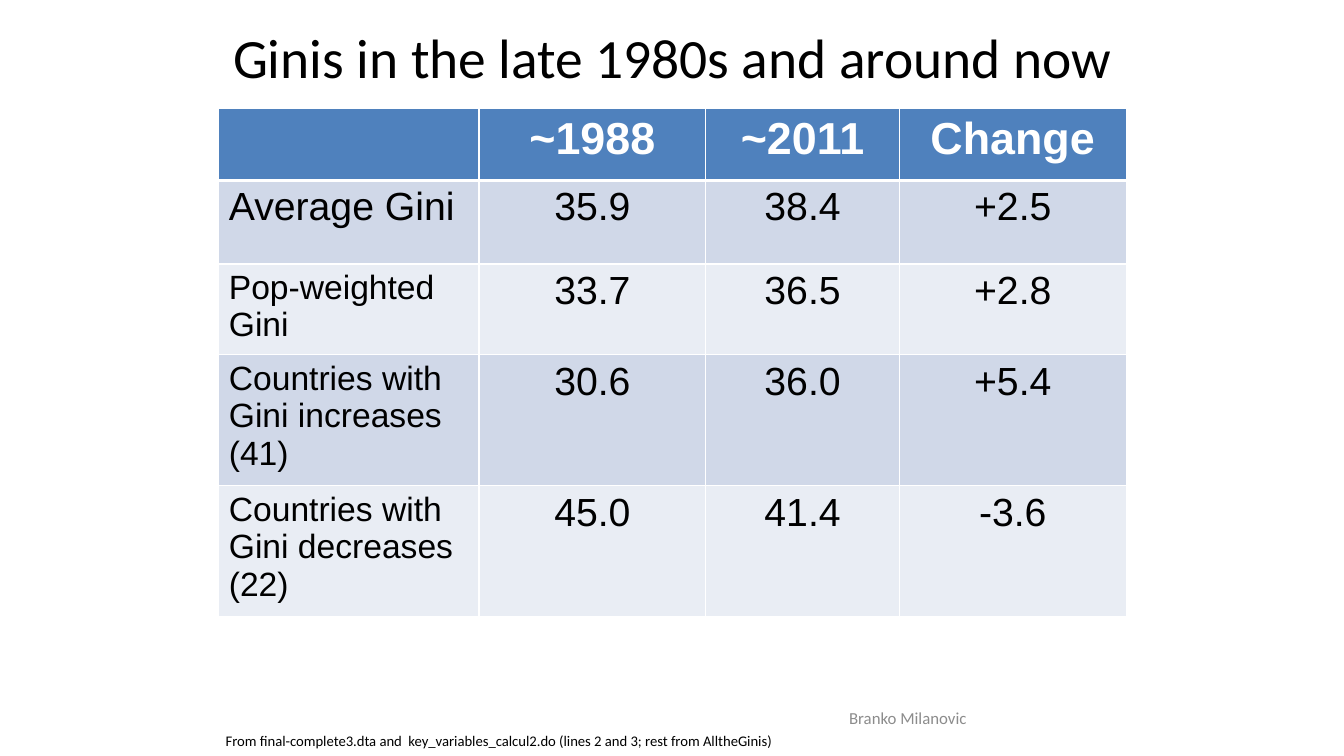
from lxml import etree
from pptx import Presentation
from pptx.dml.color import RGBColor
from pptx.enum.text import MSO_ANCHOR as Anchor, PP_ALIGN as Align
from pptx.oxml.ns import qn
from pptx.util import Inches, Pt

# Content
TITLE = "Ginis in the late 1980s and around now"
AUTHOR = "Branko Milanovic"
FOOTNOTE = ("From final-complete3.dta and  key_variables_calcul2.do "
            "(lines 2 and 3; rest from AlltheGinis)")
GINI_ROWS = [
    ("", "~1988", "~2011", "Change"),
    ("Average Gini", "35.9", "38.4", "+2.5"),
    ("Pop-weighted Gini", "33.7", "36.5", "+2.8"),
    ("Countries with Gini increases (41)", "30.6", "36.0", "+5.4"),
    ("Countries with Gini decreases (22)", "45.0", "41.4", "-3.6"),
]
COLUMN_WIDTHS = [2.58, 2.25, 1.92, 2.25]
ROW_HEIGHTS = [0.71, 0.83, 0.87, 1.25, 1.16]
LABEL_SIZES = [32, 28, 24, 24, 24]

# Colours
BLACK = RGBColor(0x00, 0x00, 0x00)
WHITE = RGBColor(0xFF, 0xFF, 0xFF)
GREY = RGBColor(0x8C, 0x8C, 0x8C)
HEADER_BLUE = RGBColor(0x4F, 0x81, 0xBD)
BANDS = [RGBColor(0xE9, 0xED, 0xF4), RGBColor(0xD0, 0xD8, 0xE8)]


def style_paragraph(paragraph, font_name, size, color, align, bold=False):
    paragraph.alignment = align
    font = paragraph.font
    font.name, font.size, font.bold = font_name, Pt(size), bold
    font.color.rgb = color


def add_text(slide, box, text, size, color, align, anchor):
    shape = slide.shapes.add_textbox(*map(Inches, box))
    frame = shape.text_frame
    frame.word_wrap = True
    frame.vertical_anchor = anchor
    frame.text = text
    style_paragraph(frame.paragraphs[0], "Calibri", size, color, align)


def set_borders(cell, bottom_width):
    properties = cell._tc.get_or_add_tcPr()
    widths = [("a:lnL", 1), ("a:lnR", 1), ("a:lnT", 1), ("a:lnB", bottom_width)]
    for position, (tag, width) in enumerate(widths):
        line = etree.Element(qn(tag), w=str(Pt(width)))
        fill = etree.SubElement(line, qn("a:solidFill"))
        etree.SubElement(fill, qn("a:srgbClr"), val=str(WHITE))
        properties.insert(position, line)


def add_gini_table(slide):
    box = (2.17, 1.08, sum(COLUMN_WIDTHS), sum(ROW_HEIGHTS))
    table = slide.shapes.add_table(
        len(GINI_ROWS), len(COLUMN_WIDTHS), *map(Inches, box)).table
    for column, width in zip(table.columns, COLUMN_WIDTHS):
        column.width = Inches(width)
    for row_index, values in enumerate(GINI_ROWS):
        table.rows[row_index].height = Inches(ROW_HEIGHTS[row_index])
        header = row_index == 0
        for column_index, value in enumerate(values):
            cell = table.cell(row_index, column_index)
            cell.text = value
            cell.fill.solid()
            cell.fill.fore_color.rgb = HEADER_BLUE if header else BANDS[row_index % 2]
            set_borders(cell, 3 if header else 1)
            label = column_index == 0
            size = LABEL_SIZES[row_index] if label else 32 if header else 28
            style_paragraph(cell.text_frame.paragraphs[0], "Arial", size,
                            WHITE if header else BLACK,
                            Align.LEFT if label else Align.CENTER, header)


def main():
    presentation = Presentation()
    presentation.slide_width = Inches(13.33)
    presentation.slide_height = Inches(7.5)
    slide = presentation.slides.add_slide(presentation.slide_layouts[6])

    # Title, table, source note and author
    add_text(slide, (2.17, 0.17, 9, 0.78), TITLE, 39.6, BLACK,
             Align.CENTER, Anchor.MIDDLE)
    add_gini_table(slide)
    add_text(slide, (2.14, 7.21, 6.58, 0.28), FOOTNOTE, 10.5, BLACK,
             Align.LEFT, Anchor.TOP)
    add_text(slide, (7.42, 6.92, 3.17, 0.4), AUTHOR, 12, GREY,
             Align.CENTER, Anchor.MIDDLE)

    presentation.save("out.pptx")


if __name__ == "__main__":
    main()
